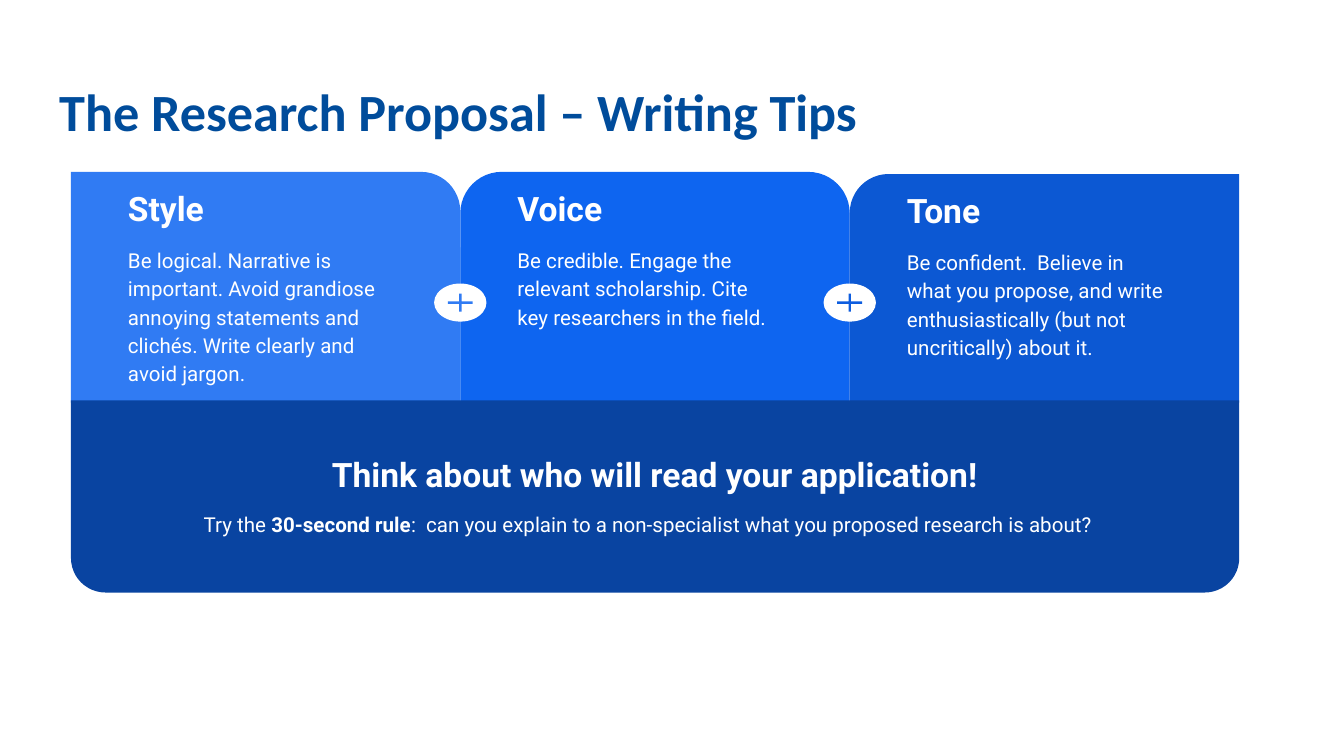
"""Build the slide on writing tips for a research proposal."""
from pptx import Presentation
from pptx.dml.color import RGBColor
from pptx.enum.shapes import MSO_SHAPE
from pptx.enum.text import MSO_ANCHOR, PP_ALIGN
from pptx.util import Cm, Pt

ROUND1 = MSO_SHAPE.ROUND_1_RECTANGLE
ROUND2 = MSO_SHAPE.ROUND_2_SAME_RECTANGLE
OVAL, PLUS = MSO_SHAPE.OVAL, MSO_SHAPE.MATH_PLUS
TOP, LEFT, CENTER = MSO_ANCHOR.TOP, PP_ALIGN.LEFT, PP_ALIGN.CENTER

WHITE = RGBColor(0xFF, 0xFF, 0xFF)
NAVY = RGBColor(0x00, 0x4C, 0x9B)
LIGHT = RGBColor(0x30, 0x7B, 0xF3)
MID = RGBColor(0x0E, 0x65, 0xF0)
DEEP = RGBColor(0x0C, 0x58, 0xD3)
JOIN = RGBColor(0x0D, 0x5D, 0xDF)
DARK = RGBColor(0x09, 0x44, 0xA1)

TITLE = "The Research Proposal – Writing Tips"
TIPS = [
    ("Style", "Be logical. Narrative is important. Avoid grandiose annoying "
     "statements and clichés. Write clearly and avoid jargon.",
     LIGHT, ROUND1, [0.17], 0),
    ("Voice", "Be credible. Engage the relevant scholarship. Cite key "
     "researchers in the field.", MID, ROUND2, [0.18, 0], 0),
    ("Tone", "Be confident.  Believe in what you propose, and write "
     "enthusiastically (but not uncritically) about it.",
     DEEP, ROUND1, [0.17], 0.04),
]
SIGNS = [LIGHT, JOIN]
CALL = "Think about who will read your application!"
RULE = [("Try the ", False), ("30-second rule", True),
        (":  can you explain to a non-specialist what you proposed "
         "research is about?", False)]

EDGE, ROOF, PITCH, FLOOR = 1.34, 3.25, 7.36, 7.61
INSET, TEXT_W = 0.83, 5.51
SIGN_Y = 5.72

deck = Presentation()
deck.slide_width, deck.slide_height = Cm(25.4), Cm(14.29)
slide = deck.slides.add_slide(deck.slide_layouts[6])


def add_text(text, box, size=11, font="Roboto", color=WHITE, bold=False,
             align=LEFT, space=None):
    """Place a text box; text is a string or a list of (words, bold)."""
    frame = slide.shapes.add_textbox(*map(Cm, box)).text_frame
    frame.word_wrap = True
    frame.vertical_anchor = TOP
    frame.margin_left = frame.margin_right = Cm(0.25)
    frame.margin_top = frame.margin_bottom = Cm(0.25)
    para = frame.paragraphs[0]
    para.alignment = align
    if space:
        para.line_spacing = space
    for words, heavy in [(text, bold)] if isinstance(text, str) else text:
        run = para.add_run()
        run.text = words
        run.font.name, run.font.size = font, Pt(size)
        run.font.bold, run.font.color.rgb = heavy, color


def add_form(kind, box, fill, adjust=()):
    """Place a plain filled shape."""
    form = slide.shapes.add_shape(kind, *map(Cm, box))
    form.shadow.inherit = False
    form.fill.solid()
    form.fill.fore_color.rgb = fill
    form.line.fill.background()
    for i, value in enumerate(adjust):
        form.adjustments[i] = value
    return form


def add_mid(kind, x, y, wide, high, fill, adjust=()):
    """Place a shape by its centre."""
    add_form(kind, (x - wide / 2, y - high / 2, wide, high), fill, adjust)


add_text(TITLE, (0.87, 1.25, 23.67, 1.6), size=28, font="Calibri",
         color=NAVY, bold=True)

for i, (head, body, fill, kind, adjust, drop) in enumerate(TIPS):
    x, y = EDGE + i * PITCH, ROOF + drop
    panel = add_form(kind, (x, y, PITCH, FLOOR - y), fill, adjust)
    if i == len(TIPS) - 1:
        panel.element.spPr.get_or_add_xfrm().set("flipH", "1")
    add_text(head, (x + INSET, y + 0.05, TEXT_W, 1.27), size=18, bold=True)
    add_text(body, (x + INSET, y + 1.12, TEXT_W, 1.42), space=1.15)

for i, fill in enumerate(SIGNS, 1):
    x = EDGE + i * PITCH
    add_mid(OVAL, x, SIGN_Y, 0.99, 0.72, WHITE)
    add_mid(PLUS, x, SIGN_Y, 0.64, 0.46, fill, [0.1])

banner = add_form(ROUND2, (EDGE, 7.57, 3 * PITCH, 3.63), DARK, [0.18, 0])
banner.rotation = 180
add_text(CALL, (4.83, 8.33, 15.09, 0.66), size=18, bold=True, align=CENTER)
add_text(RULE, (3.18, 9.35, 18.14, 2.11), align=CENTER, space=1.15)

deck.save("out.pptx")
